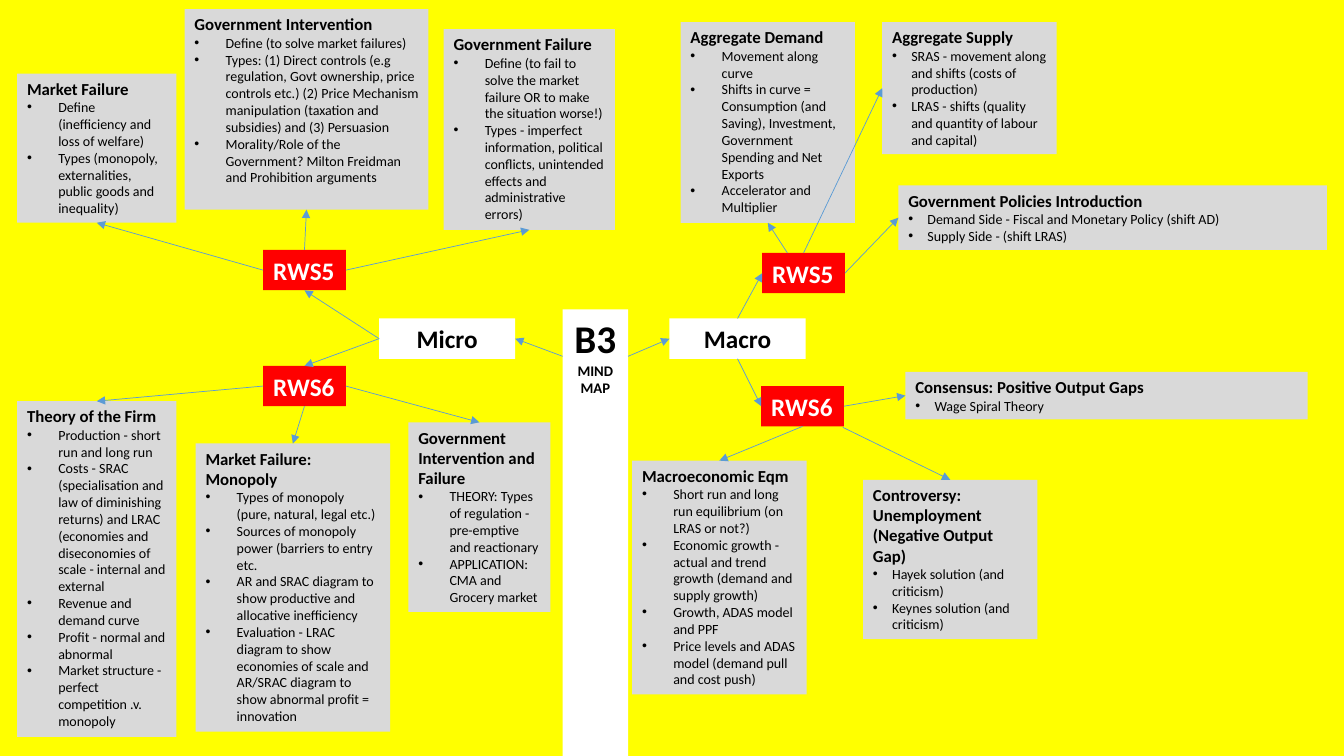
from dataclasses import dataclass

from lxml.etree import SubElement
from pptx import Presentation
from pptx.dml.color import RGBColor
from pptx.enum.shapes import MSO_CONNECTOR
from pptx.enum.text import MSO_ANCHOR, MSO_AUTO_SIZE, PP_ALIGN
from pptx.oxml.ns import qn
from pptx.util import Inches, Pt

TOP, LEFT, BOTTOM, RIGHT = range(4)
WIDE, NARROW = 0.31, 0.19


@dataclass
class Label:
    key: str
    text: str
    x: float
    y: float
    w: float
    fill: str
    color: str
    wrap: bool


@dataclass
class Card:
    key: str
    title: str
    box: tuple[float, float, float, float]
    indent: float
    items: list[str]


@dataclass
class Link:
    start: str | tuple[float, float]
    start_site: int | None
    end: str
    end_site: int


LABELS = [
    Label("macro", "Macro", 6.64, 3.16, 1.35, "FFFFFF", "000000", True),
    Label("micro", "Micro", 3.76, 3.16, 1.35, "FFFFFF", "000000", True),
    Label("micro5", "RWS5", 2.61, 2.48, 0.82, "FF0000", "FFFFFF", False),
    Label("micro6", "RWS6", 2.61, 3.63, 0.82, "FF0000", "FFFFFF", False),
    Label("macro5", "RWS5", 7.56, 2.51, 0.82, "FF0000", "FFFFFF", False),
    Label("macro6", "RWS6", 7.55, 3.83, 0.82, "FF0000", "FFFFFF", False),
]

CARDS = [
    Card("failure", "Market Failure", (0.17, 0.73, 1.58, 1.48), WIDE, [
        "Define (inefficiency and loss of welfare)",
        "Types (monopoly, externalities, public goods and inequality)"]),
    Card("intervention", "Government Intervention", (1.83, 0.09, 2.42, 1.99), WIDE, [
        "Define (to solve market failures)",
        "Types: (1) Direct controls (e.g regulation, Govt ownership, price controls etc.) "
        "(2) Price Mechanism manipulation (taxation and subsidies) and (3) Persuasion",
        "Morality/Role of the Government? Milton Freidman and Prohibition arguments"]),
    Card("gov_failure", "Government Failure", (4.4, 0.29, 1.7, 1.99), WIDE, [
        "Define (to fail to solve the market failure OR to make the situation worse!)",
        "Types - imperfect information, political conflicts, unintended effects and "
        "administrative errors)"]),
    Card("firm", "Theory of the Firm", (0.17, 3.98, 1.58, 3.33), WIDE, [
        "Production - short run and long run",
        "Costs - SRAC (specialisation and law of diminishing returns) and LRAC "
        "(economies and diseconomies of scale - internal and external",
        "Revenue and demand curve",
        "Profit - normal and abnormal",
        "Market structure - perfect competition .v. monopoly"]),
    Card("monopoly", "Market Failure: Monopoly", (1.94, 4.4, 1.93, 2.86), WIDE, [
        "Types of monopoly (pure, natural, legal etc.)",
        "Sources of monopoly power (barriers to entry etc.",
        "AR and SRAC diagram to show productive and allocative inefficiency",
        "Evaluation - LRAC diagram to show economies of scale and AR/SRAC diagram "
        "to show abnormal profit = innovation"]),
    Card("regulation", "Government Intervention and Failure", (4.05, 4.19, 1.41, 1.88), WIDE, [
        "THEORY: Types of regulation - pre-emptive and reactionary",
        "APPLICATION: CMA and Grocery market"]),
    Card("demand", "Aggregate Demand", (6.75, 0.22, 1.73, 1.99), WIDE, [
        "Movement along curve",
        "Shifts in curve = Consumption (and Saving), Investment, Government Spending "
        "and Net Exports",
        "Accelerator and Multiplier"]),
    Card("supply", "Aggregate Supply", (8.75, 0.22, 1.73, 1.31), NARROW, [
        "SRAS - movement along and shifts (costs of production)",
        "LRAS - shifts (quality and quantity of labour and capital)"]),
    Card("policies", "Government Policies Introduction", (8.91, 1.84, 4.25, 0.64), NARROW, [
        "Demand Side - Fiscal and Monetary Policy (shift AD)",
        "Supply Side - (shift LRAS)"]),
    Card("equilibrium", "Macroeconomic Eqm", (6.27, 4.57, 1.73, 2.32), WIDE, [
        "Short run and long run equilibrium (on LRAS or not?)",
        "Economic growth - actual and trend growth (demand and supply growth)",
        "Growth, ADAS model and PPF",
        "Price levels and ADAS model (demand pull and cost push)"]),
    Card("controversy", "Controversy: Unemployment (Negative Output Gap)",
         (8.56, 4.76, 1.73, 1.58), NARROW, [
             "Hayek solution (and criticism)",
             "Keynes solution (and criticism)"]),
    Card("consensus", "Consensus: Positive Output Gaps", (8.98, 3.69, 3.99, 0.47), NARROW, [
        "Wage Spiral Theory"]),
]

LINKS = [
    Link("hub", RIGHT, "macro", LEFT),
    Link("macro", TOP, "macro5", LEFT),
    Link("macro", BOTTOM, "macro6", LEFT),
    Link("macro5", RIGHT, "policies", LEFT),
    Link("macro5", TOP, "supply", LEFT),
    Link((7.81, 2.51), None, "demand", BOTTOM),
    Link("micro5", RIGHT, "gov_failure", BOTTOM),
    Link("micro5", TOP, "intervention", BOTTOM),
    Link("micro5", LEFT, "failure", BOTTOM),
    Link("micro6", LEFT, "firm", TOP),
    Link("micro6", BOTTOM, "monopoly", TOP),
    Link("micro6", RIGHT, "regulation", TOP),
    Link("macro6", BOTTOM, "equilibrium", TOP),
    Link((8.36, 4.24), None, "controversy", TOP),
    Link("macro6", RIGHT, "consensus", LEFT),
    Link("hub", LEFT, "micro", RIGHT),
    Link("micro", LEFT, "micro5", BOTTOM),
    Link("micro", LEFT, "micro6", TOP),
]


def rgb(value: str) -> RGBColor:
    return RGBColor.from_string(value)


def format_box(sp, fill: str, wrap: bool = True):
    sp.fill.solid()
    sp.fill.fore_color.rgb = rgb(fill)
    tf = sp.text_frame
    tf.word_wrap = wrap
    tf.auto_size = MSO_AUTO_SIZE.SHAPE_TO_FIT_TEXT
    tf.vertical_anchor = MSO_ANCHOR.TOP
    return tf


def write(tf, text: str, *, size: float, color: str = "000000", bold: bool = True,
          align=PP_ALIGN.LEFT, indent: float = 0, first: bool = False) -> None:
    p = tf.paragraphs[0] if first else tf.add_paragraph()
    p.alignment = align
    r = p.add_run()
    r.text = text
    r.font.name = "Calibri"
    r.font.size = Pt(size)
    r.font.bold = bold
    r.font.color.rgb = rgb(color)
    if indent:
        ppr = p._p.get_or_add_pPr()
        ppr.set("marL", str(Inches(indent)))
        ppr.set("indent", str(-Inches(indent)))
        SubElement(ppr, qn("a:buFont"), typeface="Arial")
        SubElement(ppr, qn("a:buChar"), char="•")


def draw_hub(sp):
    sp.left, sp.top, sp.width, sp.height = map(Inches, (5.58, 3.07, 0.65, 0.93))
    tf = format_box(sp, "FFFFFF")
    write(tf, "B3", size=28, align=PP_ALIGN.CENTER, first=True)
    write(tf, "MIND MAP", size=10.5, align=PP_ALIGN.CENTER)
    return sp


def draw_label(s, label: Label):
    sp = s.shapes.add_textbox(*map(Inches, (label.x, label.y, label.w, 0.4)))
    tf = format_box(sp, label.fill, label.wrap)
    align = PP_ALIGN.CENTER if label.wrap else PP_ALIGN.LEFT
    write(tf, label.text, size=18, color=label.color, align=align, first=True)
    return sp


def draw_card(s, card: Card):
    sp = s.shapes.add_textbox(*map(Inches, card.box))
    tf = format_box(sp, "D9D9D9")
    write(tf, card.title, size=12, first=True)
    for item in card.items:
        write(tf, item, size=10, bold=False, indent=card.indent)
    return sp


def draw_link(s, link: Link, nodes: dict) -> None:
    loose = link.start_site is None
    x, y = map(Inches, link.start if loose else (0, 0))
    c = s.shapes.add_connector(MSO_CONNECTOR.STRAIGHT, x, y, x, y)
    if not loose:
        c.begin_connect(nodes[link.start], link.start_site)
    c.end_connect(nodes[link.end], link.end_site)
    c.line.color.rgb = rgb("5B9BD5")
    c.line.width = Pt(0.5)
    sppr = c._element.spPr
    SubElement(sppr.find(qn("a:ln")), qn("a:tailEnd"), type="triangle")
    SubElement(sppr, qn("a:effectLst"))


def main() -> None:
    prs = Presentation()
    prs.slide_width, prs.slide_height = Inches(13.33), Inches(7.5)
    s = prs.slides.add_slide(prs.slide_layouts[5])
    s.background.fill.solid()
    s.background.fill.fore_color.rgb = rgb("FFFF00")
    nodes = {"hub": draw_hub(s.shapes.title)}
    nodes |= {label.key: draw_label(s, label) for label in LABELS}
    nodes |= {card.key: draw_card(s, card) for card in CARDS}
    for link in LINKS:
        draw_link(s, link, nodes)
    prs.save("out.pptx")


if __name__ == "__main__":
    main()
